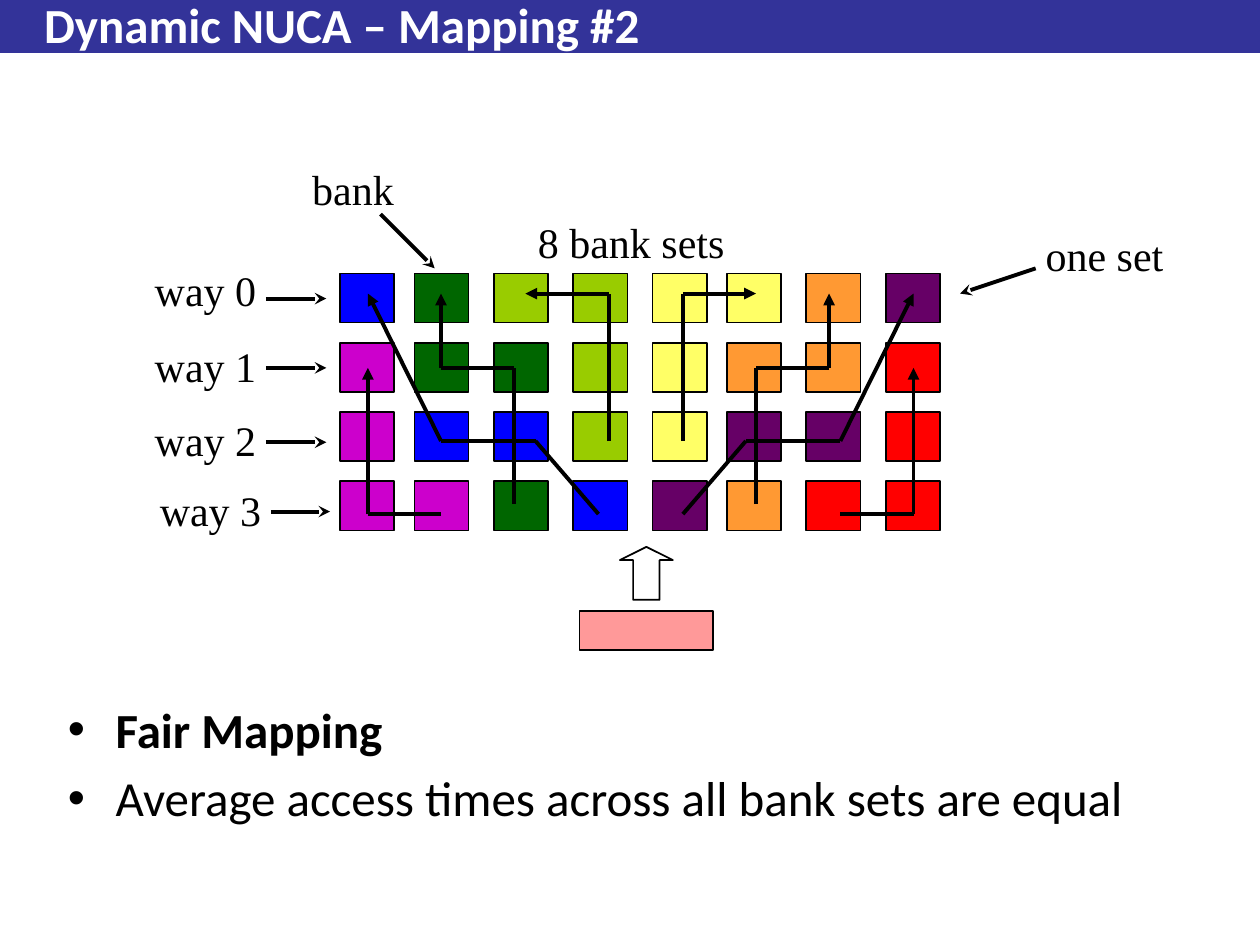
from lxml import etree
from pptx import Presentation
from pptx.dml.color import RGBColor
from pptx.enum.shapes import MSO_CONNECTOR, MSO_SHAPE
from pptx.enum.text import MSO_ANCHOR, MSO_AUTO_SIZE, PP_ALIGN
from pptx.oxml.ns import qn
from pptx.util import Inches, Pt

TITLE = "Dynamic NUCA – Mapping #2"
BULLETS = [("Fair Mapping", True),
           ("Average access times across all bank sets are equal", False)]

BANK_COLORS = {"B": "0000FF", "M": "CC00CC", "G": "006600", "L": "99CC00",
               "Y": "FFFF66", "O": "FF9933", "P": "660066", "R": "FF0000"}
WAYS = ["BGLLYYOP", "MGGLYOOR", "MBBLYPPR", "MMGBPORR"]
COLUMN_LEFTS = [2.7, 3.29, 3.92, 4.55, 5.18, 5.77, 6.4, 7.03]
ROW_TOP, ROW_STEP = 2.17, 0.55
BANK_SIZE = (0.43, 0.39)

LABELS = [("8 bank sets", 4.17, 1.67, 1.69), ("one set", 8.2, 1.77, 1.3),
          ("bank", 2.38, 1.25, 1.06), ("way 0", 1.13, 2.05, 1.06),
          ("way 1", 1.13, 2.65, 1.06), ("way 2", 1.13, 3.24, 1.06),
          ("way 3", 1.17, 3.8, 1.06)]
POINTERS = [[(2.11, 2.37), (2.59, 2.37)], [(2.11, 2.92), (2.59, 2.92)],
            [(2.11, 3.51), (2.59, 3.51)], [(2.15, 4.06), (2.62, 4.06)],
            [(8.22, 2.13), (7.62, 2.33)], [(3.02, 1.7), (3.45, 2.13)]]
BANK_SET_PATHS = [
    [(6.67, 4.08), (7.25, 4.08), (7.25, 2.92)],
    [(3.5, 4.08), (2.92, 4.08), (2.92, 2.92)],
    [(4.83, 3.5), (4.83, 2.33), (4.17, 2.33)],
    [(5.42, 3.5), (5.42, 2.33), (6, 2.33)],
    [(5.42, 4.08), (5.92, 3.5), (6.67, 3.5), (7.25, 2.33)],
    [(4.75, 4.08), (4.25, 3.5), (3.5, 3.5), (2.92, 2.33)],
    [(4.08, 4), (4.08, 2.92), (3.5, 2.92), (3.5, 2.33)],
    [(6, 4), (6, 2.92), (6.58, 2.92), (6.58, 2.33)],
]

TITLE_FONT = {"name": "Calibri", "size": Pt(28), "bold": True}
BULLET_FONT = {"name": "Calibri", "size": Pt(28)}
LABEL_FONT = {"name": "Times New Roman", "size": Pt(24)}


def color(value):
    return RGBColor.from_string(value)


def write(paragraph, text, font_values, text_color="000000"):
    run = paragraph.add_run()
    run.text = text
    for name, value in font_values.items():
        setattr(run.font, name, value)
    run.font.color.rgb = color(text_color)


def add_box(slide, preset, box, fill, outlined=True):
    shape = slide.shapes.add_shape(preset, *map(Inches, box))
    shape.shadow.inherit = False
    shape.fill.solid()
    shape.fill.fore_color.rgb = color(fill)
    if outlined:
        shape.line.color.rgb = color("000000")
        shape.line.width = Pt(1)
    else:
        shape.line.fill.background()
    return shape


def add_text_frame(slide, box, wrap):
    frame = slide.shapes.add_textbox(*map(Inches, box)).text_frame
    frame.word_wrap = wrap
    return frame


def add_path(slide, points, head):
    segments = list(zip(points, points[1:]))
    for index, (start, end) in enumerate(segments):
        connector = slide.shapes.add_connector(
            MSO_CONNECTOR.STRAIGHT, *map(Inches, start + end))
        connector.line.color.rgb = color("000000")
        connector.line.width = Pt(2.25)
        if index == len(segments) - 1:
            etree.SubElement(connector.line._get_or_add_ln(), qn("a:tailEnd"), type=head)
        etree.SubElement(connector.element.spPr, qn("a:effectLst"))


def add_title(slide):
    title = slide.shapes.title
    bar = add_box(slide, MSO_SHAPE.RECTANGLE, (0, 0, 10, 0.42), "333399", outlined=False)
    title.element.addprevious(bar.element)
    for name, value in zip(("left", "top", "width", "height"), (0.25, 0.05, 9.25, 0.28)):
        setattr(title, name, Inches(value))
    frame = title.text_frame
    frame.auto_size = MSO_AUTO_SIZE.NONE
    frame.vertical_anchor = MSO_ANCHOR.MIDDLE
    frame.paragraphs[0].alignment = PP_ALIGN.LEFT
    write(frame.paragraphs[0], TITLE, TITLE_FONT, "FFFFFF")


def add_bullets(slide):
    frame = add_text_frame(slide, (0.44, 5.5, 9.13, 1.4), True)
    for index, (text, bold) in enumerate(BULLETS):
        paragraph = frame.add_paragraph() if index else frame.paragraphs[0]
        paragraph.space_before = Pt(5.6)
        write(paragraph, text, {**BULLET_FONT, "bold": bold})
        properties = paragraph._p.get_or_add_pPr()
        properties.set("marL", str(Inches(0.38)))
        properties.set("indent", str(Inches(-0.38)))
        etree.SubElement(properties, qn("a:buFont"), typeface="Arial")
        etree.SubElement(properties, qn("a:buChar"), char="•")


def main():
    presentation = Presentation()
    presentation.slide_width, presentation.slide_height = Inches(10), Inches(7.5)
    slide = presentation.slides.add_slide(presentation.slide_layouts[5])
    add_title(slide)
    add_bullets(slide)
    for row, way in enumerate(WAYS):
        for left, bank in zip(COLUMN_LEFTS, way):
            box = (left, ROW_TOP + row * ROW_STEP, *BANK_SIZE)
            add_box(slide, MSO_SHAPE.RECTANGLE, box, BANK_COLORS[bank])
    add_box(slide, MSO_SHAPE.RECTANGLE, (4.6, 4.85, 1.06, 0.31), "FF9999")
    arrow = add_box(slide, MSO_SHAPE.UP_ARROW, (4.92, 4.34, 0.42, 0.42), "FFFFFF")
    arrow.adjustments[0], arrow.adjustments[1] = 0.5, 0.25
    for text, left, top, width in LABELS:
        frame = add_text_frame(slide, (left, top, width, 0.5), True)
        write(frame.paragraphs[0], text, LABEL_FONT)
    for points in POINTERS:
        add_path(slide, points, "stealth")
    for points in BANK_SET_PATHS:
        add_path(slide, points, "triangle")
    presentation.save("out.pptx")


if __name__ == "__main__":
    main()
